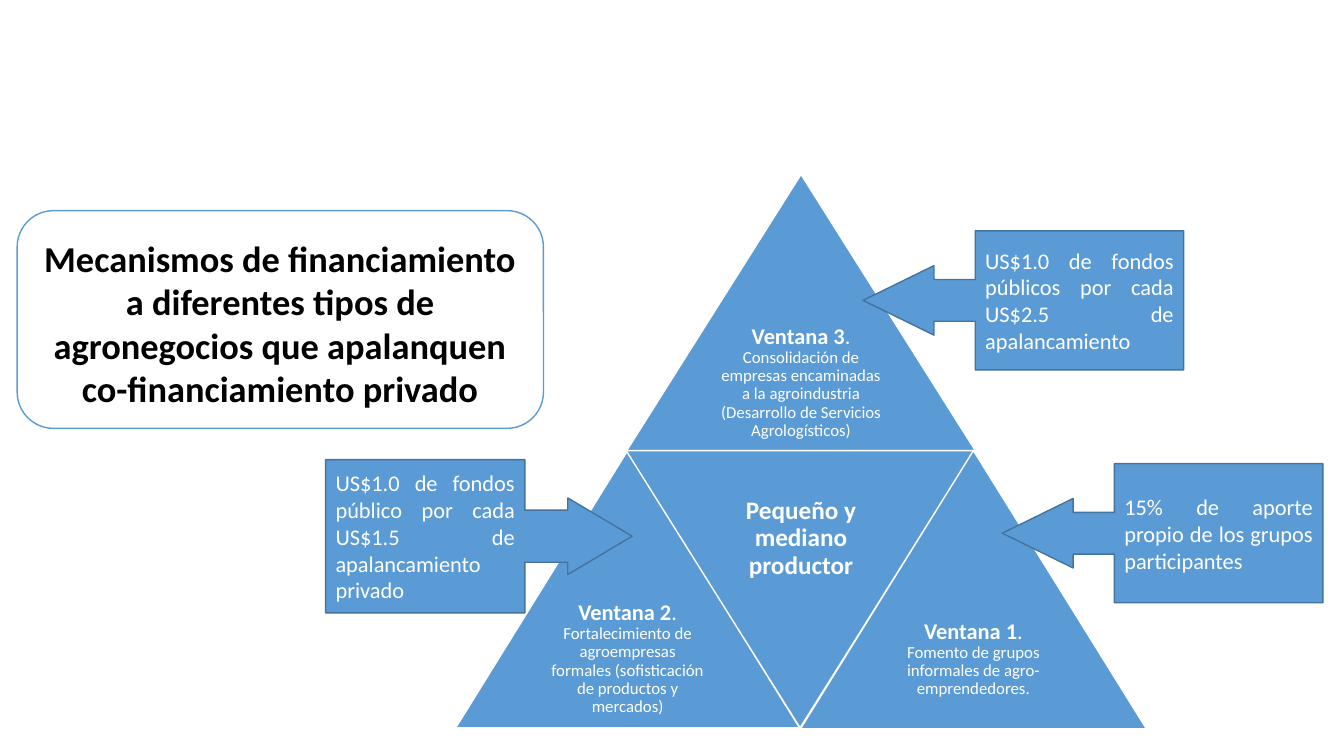
from pptx import Presentation
from pptx.dml.color import RGBColor
from pptx.enum import shapes, text
from pptx.util import Inches, Pt

FONT = "Calibri"
BLUE, DARK_BLUE, WHITE, BLACK = "5B9BD5", "43739E", "FFFFFF", "000000"


def color(hex_value):
    return RGBColor.from_string(hex_value)


def set_font(font, size, hex_value, bold=False):
    font.name, font.size, font.bold = FONT, Pt(size), bold
    font.color.rgb = color(hex_value)


def set_frame(frame, inset, anchor):
    frame.word_wrap = True
    frame.auto_size = text.MSO_AUTO_SIZE.NONE
    frame.vertical_anchor = anchor
    frame.margin_left = frame.margin_right = Inches(inset)
    frame.margin_top = frame.margin_bottom = Inches(min(inset, 0.07))


def add_shape(slide, kind, box, line, fill=None):
    shape = slide.shapes.add_shape(kind, *map(Inches, box))
    shape.shadow.inherit = False
    if fill:
        shape.fill.solid()
        shape.fill.fore_color.rgb = color(fill)
    else:
        shape.fill.background()
    shape.line.color.rgb = color(line)
    shape.line.width = Pt(1)
    return shape


def add_triangle(slide, box, rotation=0):
    triangle = add_shape(slide, shapes.MSO_SHAPE.ISOSCELES_TRIANGLE, box, WHITE, BLUE)
    triangle.rotation = rotation


def add_label(slide, box):
    """Add a centred text box and return its paragraph."""
    frame = slide.shapes.add_textbox(*map(Inches, box)).text_frame
    set_frame(frame, 0.07, text.MSO_ANCHOR.MIDDLE)
    paragraph = frame.paragraphs[0]
    paragraph.alignment = text.PP_ALIGN.CENTER
    paragraph.line_spacing = 0.9
    return paragraph


def add_window(slide, box, heading, description):
    left, top, width, height = box
    add_triangle(slide, box)
    paragraph = add_label(slide, (left + width / 4, top + height / 2, width / 2, height / 2))
    for words, size, bold in ((heading, 16, True), (". ", 16, False), (description, 12, False)):
        run = paragraph.add_run()
        run.text = words
        set_font(run.font, size, WHITE, bold)


def add_callout(slide, kind, box, adjustments, words):
    callout = add_shape(slide, kind, box, DARK_BLUE, BLUE)
    for index, value in enumerate(adjustments):
        callout.adjustments[index] = value
    set_frame(callout.text_frame, 0.1, text.MSO_ANCHOR.MIDDLE)
    paragraph = callout.text_frame.paragraphs[0]
    paragraph.text = words
    paragraph.alignment = text.PP_ALIGN.JUSTIFY
    set_font(paragraph.font, 16, WHITE)


def add_title(slide, words):
    add_shape(slide, shapes.MSO_SHAPE.ROUNDED_RECTANGLE, (0.17, 2.09, 5.22, 2.16), BLUE)
    title = slide.shapes.title
    title.left, title.top, title.width, title.height = map(Inches, (0.28, 2.19, 5, 1.95))
    set_frame(title.text_frame, 0.1, text.MSO_ANCHOR.BOTTOM)
    paragraph = title.text_frame.paragraphs[0]
    paragraph.text = words
    paragraph.alignment = text.PP_ALIGN.CENTER
    set_font(paragraph.font, 26, BLACK, True)


def main():
    presentation = Presentation()
    presentation.slide_width, presentation.slide_height = Inches(13.33), Inches(7.5)
    slide = presentation.slides.add_slide(presentation.slide_layouts[5])

    add_window(slide, (6.21, 1.73, 3.47, 2.75), "Ventana 3",
               "Consolidación de empresas encaminadas a la agroindustria "
               "(Desarrollo de Servicios Agrologísticos)")
    add_window(slide, (4.52, 4.47, 3.41, 2.75), "Ventana 2",
               "Fortalecimiento de agroempresas formales "
               "(sofisticación de productos y mercados)")
    add_triangle(slide, (6.21, 4.47, 3.45, 2.75), 180)
    center = add_label(slide, (7.08, 4.66, 1.73, 1.37))
    center.text = "Pequeño y mediano productor"
    set_font(center.font, 18, WHITE, True)
    add_window(slide, (7.94, 4.47, 3.43, 2.76), "Ventana 1",
               "Fomento de grupos informales de agro-emprendedores.")

    add_title(slide, "Mecanismos de financiamiento a diferentes tipos de agronegocios "
                     "que apalanquen co-financiamiento privado")

    add_callout(slide, shapes.MSO_SHAPE.RIGHT_ARROW_CALLOUT, (3.23, 4.56, 3.04, 1.52),
                (0.34, 0.25, 0.42, 0.65),
                "US$1.0 de fondos público por cada US$1.5 de apalancamiento privado")
    for left, top, words in (
        (9.94, 4.6, "15% de aporte propio de los grupos participantes"),
        (8.56, 2.29, "US$1.0 de fondos públicos por cada US$2.5 de apalancamiento"),
    ):
        add_callout(slide, shapes.MSO_SHAPE.LEFT_ARROW_CALLOUT, (left, top, 3.18, 1.38),
                    (0.3, 0.25, 0.51, 0.65), words)

    presentation.save("out.pptx")


if __name__ == "__main__":
    main()
